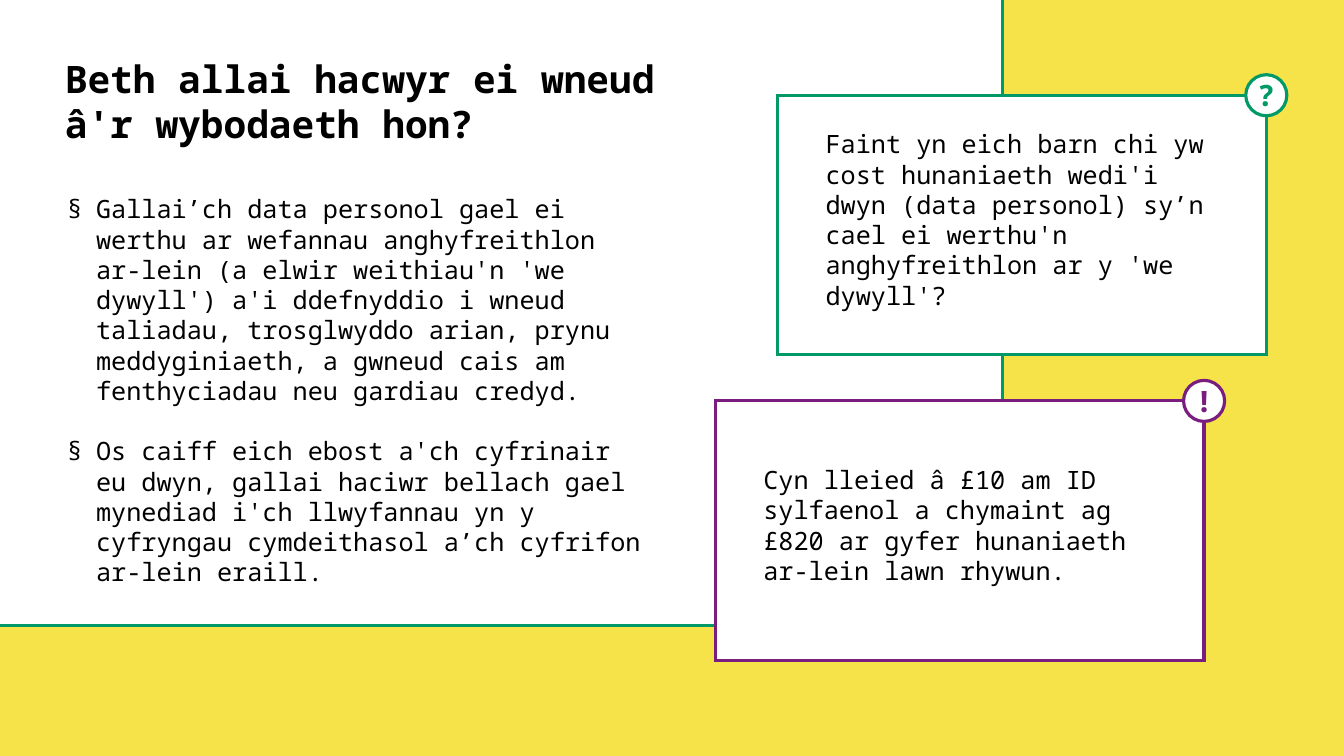
import pptx
import pptx.util
import pptx.dml.color
import pptx.enum.shapes
import pptx.enum.text
from pptx.oxml.ns import qn
from lxml import etree

Cm, Pt = pptx.util.Cm, pptx.util.Pt
RGBColor = pptx.dml.color.RGBColor
SHAPE = pptx.enum.shapes.MSO_SHAPE
ANCHOR = pptx.enum.text.MSO_ANCHOR
ALIGN = pptx.enum.text.PP_ALIGN

YELLOW = RGBColor(0xF6, 0xE2, 0x49)
WHITE = RGBColor(0xFF, 0xFF, 0xFF)
BLACK = RGBColor(0, 0, 0)
GREEN = RGBColor(0x01, 0x99, 0x67)
PURPLE = RGBColor(0x79, 0x1D, 0x7E)
FONT = "Noto Sans Mono"

TITLE = "Beth allai hacwyr ei wneud â'r wybodaeth hon?"
BULLETS = [
    "Gallai’ch data personol gael ei werthu ar wefannau anghyfreithlon ar-lein "
    "(a elwir weithiau'n 'we dywyll') a'i ddefnyddio i wneud taliadau, "
    "trosglwyddo arian, prynu meddyginiaeth, a gwneud cais am fenthyciadau neu "
    "gardiau credyd.",
    "Os caiff eich ebost a'ch cyfrinair eu dwyn, gallai haciwr bellach gael "
    "mynediad i'ch llwyfannau yn y cyfryngau cymdeithasol a’ch cyfrifon ar-lein "
    "eraill.",
]
QUESTION = ("Faint yn eich barn chi yw cost hunaniaeth wedi'i dwyn (data personol) "
            "sy’n cael ei werthu'n anghyfreithlon ar y 'we dywyll'?")
ANSWER = ("Cyn lleied â £10 am ID sylfaenol a chymaint ag £820 ar gyfer "
          "hunaniaeth ar-lein lawn rhywun.")


def add_outline(shapes, kind, x, y, w, h, color, weight=3):
    """White shape with a coloured, square-cornered outline."""
    s = shapes.add_shape(kind, Cm(x), Cm(y), Cm(w), Cm(h))
    s.shadow.inherit = False
    s.fill.solid()
    s.fill.fore_color.rgb = WHITE
    s.line.color.rgb = color
    s.line.width = Pt(weight)
    ln = s.line._get_or_add_ln()
    etree.SubElement(ln, qn("a:miter")).set("lim", "800000")
    return s


def add_text_box(shapes, x, y, w, h, margins, anchor=ANCHOR.TOP):
    """Empty text box; margins are horizontal, vertical."""
    tf = shapes.add_textbox(Cm(x), Cm(y), Cm(w), Cm(h)).text_frame
    tf.word_wrap = True
    tf.vertical_anchor = anchor
    tf.margin_left = tf.margin_right = Cm(margins[0])
    tf.margin_top = tf.margin_bottom = Cm(margins[1])
    return tf


def add_run(p, text, size, color=BLACK, bold=False):
    r = p.add_run()
    r.text = text
    r.font.name = FONT
    r.font.size = Pt(size)
    r.font.bold = bold
    r.font.color.rgb = color


def set_bullet(p, char, indent):
    pPr = p._p.get_or_add_pPr()
    pPr.set("marL", str(Cm(indent)))
    pPr.set("indent", str(-Cm(indent)))
    etree.SubElement(pPr, qn("a:buFont")).set("typeface", FONT)
    etree.SubElement(pPr, qn("a:buChar")).set("char", char)


def add_bullets(shapes, x, y, w, h, items):
    tf = add_text_box(shapes, x, y, w, h, (0.33, 0.18))
    for i, item in enumerate(items):
        p = tf.paragraphs[0] if i == 0 else tf.add_paragraph()
        if i:
            p.space_before = Pt(28.8)
        set_bullet(p, "§", 0.97)
        add_run(p, item, 24)


def add_card(slide, x, y, color, mark, text):
    """Framed card with a round badge on its top right corner."""
    w, h, d = 16.41, 8.72, 1.38
    shapes = slide.shapes.add_group_shape().shapes
    add_outline(shapes, SHAPE.RECTANGLE, x, y, w, h, color)
    # Badge, with its mark centred in the circle
    bx, by = x + w - d / 2, y - d / 2
    add_outline(shapes, SHAPE.OVAL, bx, by, d, d, color)
    tf = add_text_box(shapes, bx, by, d, d, (0, 0), ANCHOR.MIDDLE)
    p = tf.paragraphs[0]
    p.alignment = ALIGN.CENTER
    add_run(p, mark, 28, color, bold=True)
    # Card text
    tf = add_text_box(shapes, x + 1.27, y - 0.17, 13.76, 8.68, (0.33, 0.18),
                      ANCHOR.MIDDLE)
    add_run(tf.paragraphs[0], text, 24)


def main():
    prs = pptx.Presentation()
    prs.slide_width, prs.slide_height = Cm(45.16), Cm(25.4)
    slide = prs.slides.add_slide(prs.slide_layouts[6])

    # Background and white panel
    slide.background.fill.solid()
    slide.background.fill.fore_color.rgb = YELLOW
    add_outline(slide.shapes, SHAPE.RECTANGLE, -0.53, -0.64, 34.21, 21.67, GREEN, 2.75)

    # Main points
    add_bullets(slide.shapes, 1.93, 6.33, 19.99, 14.71, BULLETS)

    # Question and answer
    add_card(slide, 26.14, 3.2, GREEN, "?", QUESTION)
    add_card(slide, 24.05, 13.47, PURPLE, "!", ANSWER)

    # Title
    tf = add_text_box(slide.shapes, 1.93, 1.73, 22.2, 1.47, (0.25, 0.13))
    add_run(tf.paragraphs[0], TITLE, 36, bold=True)

    prs.save("out.pptx")


if __name__ == "__main__":
    main()
